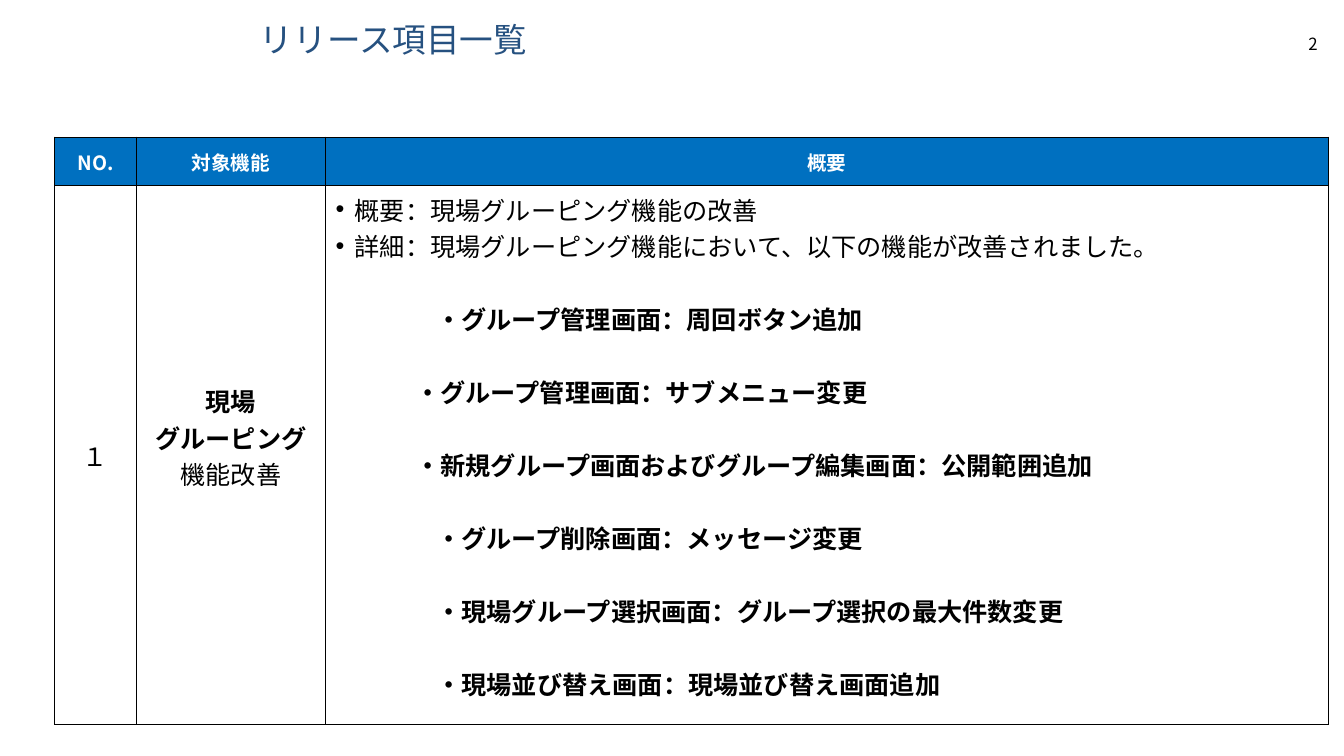
"""Build the release item list slide."""
from dataclasses import dataclass

from lxml import etree
from pptx import Presentation
from pptx.dml.color import RGBColor
from pptx.enum.text import MSO_ANCHOR, PP_ALIGN
from pptx.oxml.ns import qn
from pptx.slide import Slide
from pptx.table import _Cell
from pptx.text.text import TextFrame, _Paragraph
from pptx.util import Pt

LEFT, CENTER, RIGHT = PP_ALIGN.LEFT, PP_ALIGN.CENTER, PP_ALIGN.RIGHT
TOP, MIDDLE = MSO_ANCHOR.TOP, MSO_ANCHOR.MIDDLE
BLACK = RGBColor(0x00, 0x00, 0x00)
WHITE = RGBColor(0xFF, 0xFF, 0xFF)
BLUE = RGBColor(0x00, 0x70, 0xC0)
NAVY = RGBColor(0x26, 0x51, 0x80)
ARIAL, NOTO = "Arial", "Noto Sans CJK JP"
COLUMN_WIDTHS = (58.5, 135, 716.5)
ROW_HEIGHTS = (34.8, 385)
LINE = 26.1


@dataclass
class Style:
    size: float
    color: RGBColor = BLACK
    bold: bool = False
    font: str = ARIAL


@dataclass
class Line:
    text: str
    style: Style
    align: PP_ALIGN = LEFT
    before: float = 0
    indent: float = 0
    bullet: bool = False
    tail: str = ""


@dataclass
class Label:
    left: float
    top: float
    width: float
    height: float
    line: Line


HEAD = Style(14, WHITE, True)
HEAD_NOTO = Style(14, WHITE, True, NOTO)
BODY = Style(18)
STRONG = Style(18, bold=True)

LABELS = (
    Label(898.6, 21.6, 49.7, 21.6, Line("2", Style(12, font=NOTO), RIGHT)),
    Label(178.6, 14.4, 642.2, 30.2, Line("リリース項目一覧", Style(24, NAVY))),
)
HEADERS = (
    Line("NO.", HEAD_NOTO, CENTER),
    Line("対象機能", HEAD_NOTO, CENTER),
    Line("概要", HEAD, CENTER),
)
SUMMARY = (
    "概要：現場グルーピング機能の改善",
    "詳細：現場グルーピング機能において、以下の機能が改善されました。",
)
CHANGES = (
    ("・グループ管理画面：周回ボタン追加", 72),
    ("・グループ管理画面：サブメニュー変更", 57),
    ("・新規グループ画面およびグループ編集画面：公開範囲追加", 57),
    ("・グループ削除画面：メッセージ変更", 72),
    ("・現場グループ選択画面：グループ選択の最大件数変更", 72),
    ("・現場並び替え画面：現場並び替え画面追加", 72),
)


def format_runs(p: _Paragraph, style: Style) -> None:
    for r in p.runs:
        r.font.size = Pt(style.size)
        r.font.bold = style.bold
        r.font.name = style.font
        r.font.color.rgb = style.color
        etree.SubElement(r._r.get_or_add_rPr(), qn("a:ea"), typeface=NOTO)


def write_line(p: _Paragraph, line: Line) -> None:
    pPr = p._p.get_or_add_pPr()
    pPr.set("marL", str(Pt(line.indent)))
    pPr.set("indent", str(-Pt(line.indent) if line.bullet else 0))
    if line.bullet:
        etree.SubElement(pPr, qn("a:buFont"), typeface=ARIAL)
        etree.SubElement(pPr, qn("a:buChar"), char="•")
    else:
        etree.SubElement(pPr, qn("a:buNone"))
    p.text = line.text
    p.alignment = line.align
    if line.before:
        p.space_before = Pt(line.before)
    format_runs(p, line.style)
    if line.tail:
        r = p.add_run()
        r.text = line.tail
        format_runs(p, line.style)
        r.font.bold = False


def write_lines(tf: TextFrame, lines: list[Line]) -> None:
    for i, line in enumerate(lines):
        write_line(tf.add_paragraph() if i else tf.paragraphs[0], line)


def add_label(s: Slide, label: Label) -> None:
    sp = s.shapes.add_textbox(Pt(label.left), Pt(label.top), Pt(label.width), Pt(label.height))
    tf = sp.text_frame
    tf.word_wrap = True
    tf.vertical_anchor = MIDDLE
    write_lines(tf, [label.line])
    tf.paragraphs[0].line_spacing = 0.9


def fill_cell(cell: _Cell, lines: list[Line], fill: RGBColor, anchor: MSO_ANCHOR = MIDDLE) -> None:
    tcPr = cell._tc.get_or_add_tcPr()
    for side in ("lnL", "lnR", "lnT", "lnB"):
        ln = etree.SubElement(tcPr, qn(f"a:{side}"), w=str(Pt(1)))
        solid = etree.SubElement(ln, qn("a:solidFill"))
        etree.SubElement(solid, qn("a:srgbClr"), val=str(BLACK))
    cell.fill.solid()
    cell.fill.fore_color.rgb = fill
    cell.vertical_anchor = anchor
    write_lines(cell.text_frame, lines)


def add_release_table(s: Slide) -> None:
    frame = s.shapes.add_table(2, 3, Pt(39), Pt(98), Pt(sum(COLUMN_WIDTHS)), Pt(sum(ROW_HEIGHTS)))
    table = frame.table
    for column, width in zip(table.columns, COLUMN_WIDTHS):
        column.width = Pt(width)
    for row, height in zip(table.rows, ROW_HEIGHTS):
        row.height = Pt(height)
    for col, header in enumerate(HEADERS):
        fill_cell(table.cell(0, col), [header], BLUE)
    number, feature, overview = table.rows[1].cells
    fill_cell(number, [Line("１", BODY, CENTER)], WHITE)
    fill_cell(feature, [Line("現場\vグルーピング", STRONG, CENTER, tail="機能改善")], WHITE)
    feature.margin_bottom = Pt(3.6 + LINE)
    lines = [Line(text, BODY, indent=13.7, bullet=True) for text in SUMMARY]
    lines += [Line(text, STRONG, before=LINE, indent=indent) for text, indent in CHANGES]
    fill_cell(overview, lines, WHITE, TOP)


def main() -> None:
    prs = Presentation()
    prs.slide_width, prs.slide_height = Pt(960), Pt(540)
    s = prs.slides.add_slide(prs.slide_layouts[6])
    add_release_table(s)
    for label in LABELS:
        add_label(s, label)
    prs.save("out.pptx")


if __name__ == "__main__":
    main()
